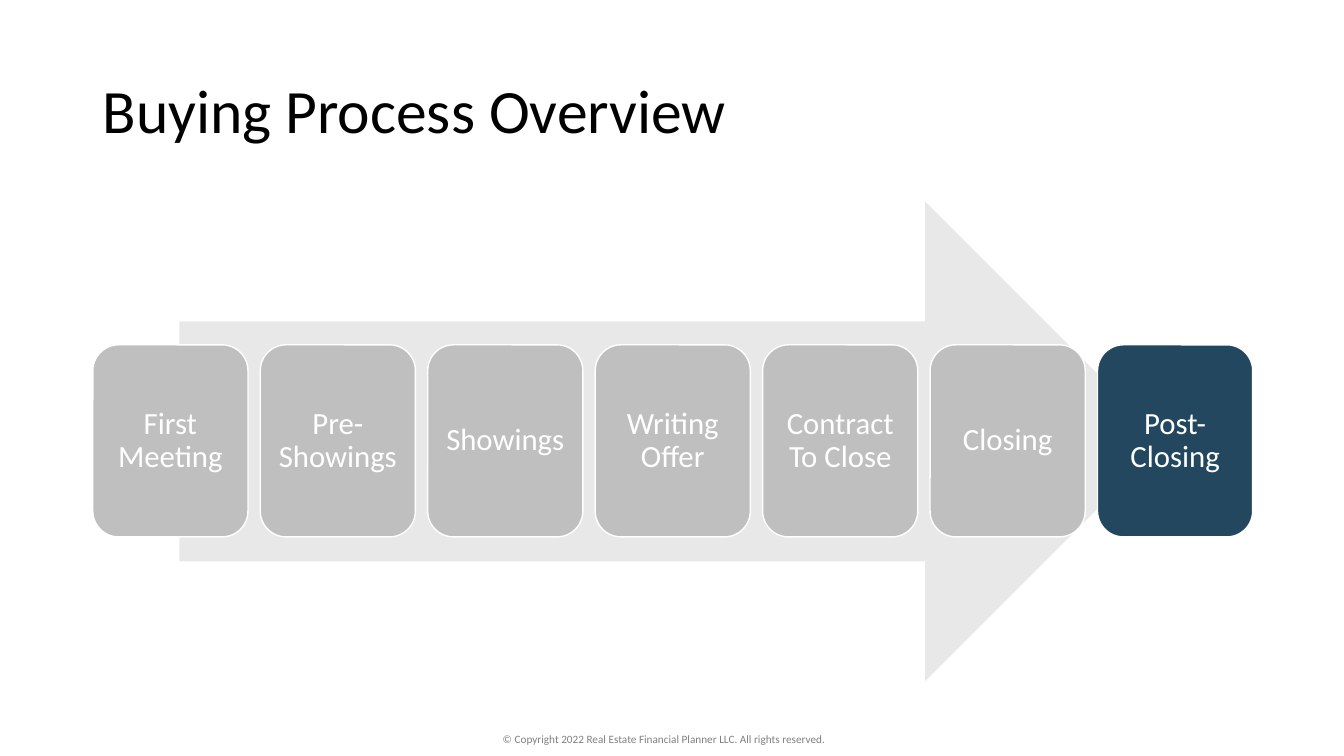
from pptx import Presentation
from pptx.dml.color import RGBColor
from pptx.enum.shapes import MSO_SHAPE as Shape
from pptx.enum.text import MSO_ANCHOR as Anchor, PP_ALIGN as Align
from pptx.util import Cm, Pt

TITLE = "Buying Process Overview"
FOOTER = "© Copyright 2022 Real Estate Financial Planner LLC. All rights reserved."
STEPS = ["First Meeting", "Pre-Showings", "Showings", "Writing Offer",
         "Contract To Close", "Closing", "Post-Closing"]
CURRENT = "Post-Closing"

COLORS = {"title": "000000", "footer": "808080", "arrow": "E8E8E8",
          "step": "BFBFBF", "current": "22475E", "white": "FFFFFF"}
FONT = "Calibri"
STEP_LEFT, STEP_TOP, STEP_W, STEP_H = 2.34, 8.69, 3.91, 4.84
STEP_PITCH = 4.22


def color(name):
    return RGBColor.from_string(COLORS[name])


def write(sp, text, size, name, align=Align.LEFT, spacing=1.0):
    tf = sp.text_frame
    tf.word_wrap = True
    tf.vertical_anchor = Anchor.MIDDLE
    p = tf.paragraphs[0]
    p.text = text
    p.alignment = align
    p.line_spacing = spacing
    p.font.name = FONT
    p.font.size = Pt(size)
    p.font.color.rgb = color(name)
    return tf


def add_shape(s, kind, box, fill):
    sp = s.shapes.add_shape(kind, *map(Cm, box))
    sp.shadow.inherit = False
    sp.fill.solid()
    sp.fill.fore_color.rgb = color(fill)
    return sp


def add_step(s, i, text):
    box = (STEP_LEFT + i * STEP_PITCH, STEP_TOP, STEP_W, STEP_H)
    sp = add_shape(s, Shape.ROUNDED_RECTANGLE, box,
                   "current" if text == CURRENT else "step")
    sp.line.color.rgb = color("white")
    sp.line.width = Pt(1)
    tf = write(sp, text, 22, "white", Align.CENTER, 0.9)
    tf.margin_left = tf.margin_right = Cm(0.23)
    tf.margin_top = tf.margin_bottom = Cm(0.23)


def main():
    """Build the buying process slide."""
    prs = Presentation()
    prs.slide_width, prs.slide_height = Cm(33.87), Cm(19.05)
    s = prs.slides.add_slide(prs.slide_layouts[6])

    footer = s.shapes.add_textbox(Cm(12.42), Cm(18.31), Cm(9.02), Cm(0.61))
    write(footer, FOOTER, 8, "footer").word_wrap = False
    title = s.shapes.add_textbox(Cm(2.34), Cm(1.02), Cm(29.21), Cm(3.68))
    write(title, TITLE, 44, "title", spacing=0.9)

    arrow = add_shape(s, Shape.RIGHT_ARROW, (4.52, 5.08, 24.84, 12.09), "arrow")
    arrow.line.fill.background()
    for i, text in enumerate(STEPS):
        add_step(s, i, text)
    prs.save("out.pptx")


if __name__ == "__main__":
    main()
